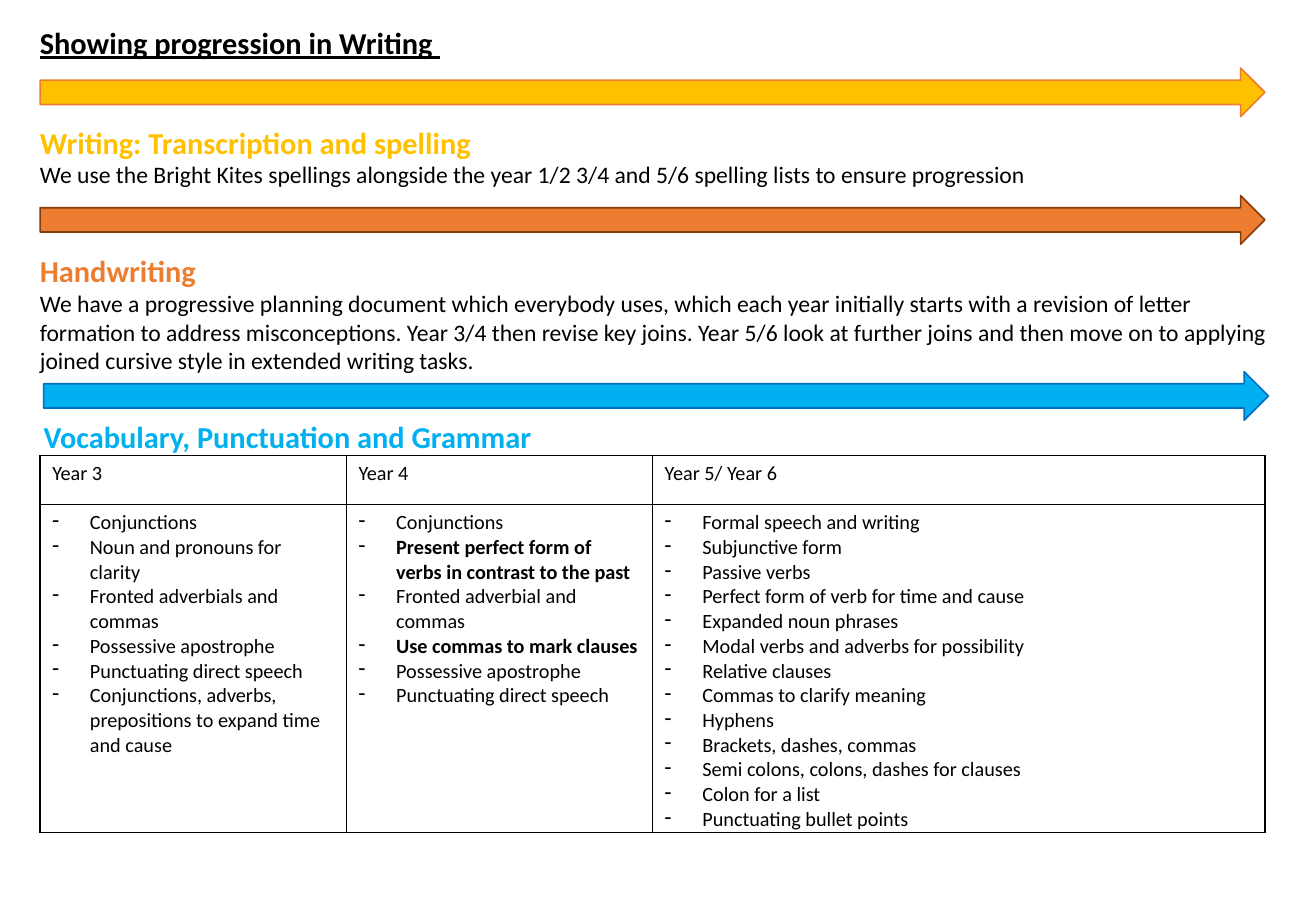
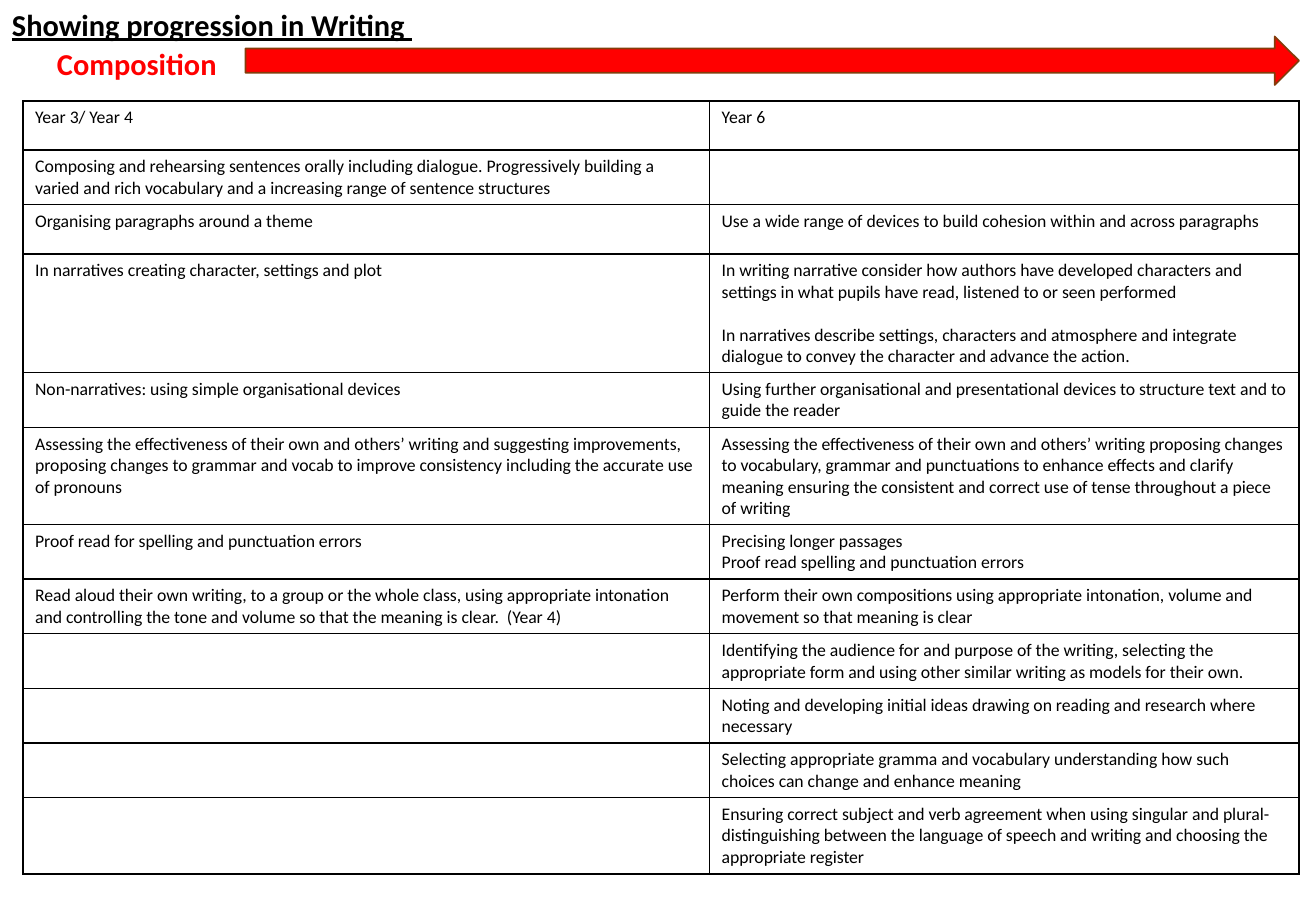
from lxml import etree
from pptx import Presentation
from pptx.dml.color import RGBColor
from pptx.enum.shapes import MSO_SHAPE
from pptx.oxml.ns import qn
from pptx.util import Inches, Pt

ARROW = MSO_SHAPE.RIGHT_ARROW
BLACK = RGBColor(0x00, 0x00, 0x00)
GOLD = RGBColor(0xFF, 0xC0, 0x00)
ORANGE = RGBColor(0xED, 0x7D, 0x31)
BROWN = RGBColor(0x84, 0x3C, 0x0B)
SKY = RGBColor(0x00, 0xB0, 0xF0)
BLUE = RGBColor(0x00, 0x70, 0xC0)
RED = RGBColor(0xFF, 0x00, 0x00)
FONT = "Calibri"

prs = Presentation()
prs.slide_width = Inches(10.83)
prs.slide_height = Inches(7.5)
COL = prs.slide_width / 100
ROW = prs.slide_height / 100
BAND = 5.33
TEXT_W = 95.29


def box(x, y, w, h):
    return round(x * COL), round(y * ROW), round(w * COL), round(h * ROW)


def write(tf, lines):
    tf.word_wrap = True
    for i, (text, size, color, bold) in enumerate(lines):
        p = tf.paragraphs[0] if i == 0 else tf.add_paragraph()
        p.text = text
        p.font.name = FONT
        p.font.size = Pt(size)
        p.font.bold = bold
        p.font.color.rgb = color


skills, composition = [prs.slides.add_slide(prs.slide_layouts[6]) for _ in range(2)]

for s, x, y in [(skills, 2.12, 2), (composition, 0, 0)]:
    tf = s.shapes.add_textbox(*box(x, y, 93.07, BAND)).text_frame
    write(tf, [("Showing progression in Writing ", 18, BLACK, True)])
    tf.paragraphs[0].font.underline = True

SPELLING = ("We use the Bright Kites spellings alongside the year 1/2 3/4 and 5/6 "
            "spelling lists to ensure progression")
JOINS = ("We have a progressive planning document which everybody uses, which each year "
         "initially starts with a revision of letter formation to address misconceptions. "
         "Year 3/4 then revise key joins. Year 5/6 look at further joins and then move on "
         "to applying joined cursive style in extended writing tasks.")

sections = [
    (skills, GOLD, ORANGE, (3.05, 7.47, 93.07), (2.12, 12.93, 8.53),
     "Writing: Transcription and spelling", SPELLING),
    (skills, ORANGE, BROWN, (3.05, 21.47, 93.07), (2.12, 27.07, 14.8),
     "Handwriting", JOINS),
    (skills, SKY, BLUE, (3.32, 40.8, 93.07), (2.4, 45.2, BAND),
     "Vocabulary, Punctuation and Grammar", None),
    (composition, RED, BROWN, (18.65, 4, 80.06), (3.42, 4.27, BAND),
     "Composition", None),
]
for s, color, edge, arrow, (x, y, h), heading, body in sections:
    sp = s.shapes.add_shape(ARROW, *box(*arrow, BAND))
    sp.shadow.inherit = False
    sp.fill.solid()
    sp.fill.fore_color.rgb = color
    sp.line.color.rgb = edge
    sp.line.width = Pt(1)
    lines = [(heading, 18, color, True)]
    if body:
        lines.append((body, 14, BLACK, False))
    write(s.shapes.add_textbox(*box(x, y, TEXT_W, h)).text_frame, lines)

BOLD = {"Present perfect form of verbs in contrast to the past", "Use commas to mark clauses"}
grammar_rows = [
    (["Year 3"], ["Year 4"], ["Year 5/ Year 6"]),
    (["Conjunctions",
      "Noun and pronouns for clarity",
      "Fronted adverbials and commas",
      "Possessive apostrophe",
      "Punctuating direct speech",
      "Conjunctions, adverbs, prepositions to expand time and cause"],
     ["Conjunctions",
      "Present perfect form of verbs in contrast to the past",
      "Fronted adverbial and commas",
      "Use commas to mark clauses",
      "Possessive apostrophe",
      "Punctuating direct speech"],
     ["Formal speech and writing",
      "Subjunctive form",
      "Passive verbs",
      "Perfect form of verb for time and cause",
      "Expanded noun phrases",
      "Modal verbs and adverbs for possibility",
      "Relative clauses",
      "Commas to clarify meaning",
      "Hyphens",
      "Brackets, dashes, commas",
      "Semi colons, colons, dashes for clauses",
      "Colon for a list",
      "Punctuating bullet points"]),
]
composition_rows = [
    (["Year 3/ Year 4"], ["Year 6"]),
    (["Composing and rehearsing sentences orally including dialogue. Progressively building "
      "a varied and rich vocabulary and a increasing range of sentence structures"], []),
    (["Organising paragraphs around a theme"],
     ["Use a wide range of devices to build cohesion within and across paragraphs"]),
    (["In narratives creating character, settings and plot"],
     ["In writing narrative consider how authors have developed characters and settings in "
      "what pupils have read, listened to or seen performed",
      "In narratives describe settings, characters and atmosphere and integrate dialogue to "
      "convey the character and advance the action."]),
    (["Non-narratives: using simple organisational devices"],
     ["Using further organisational and presentational devices to structure text and to "
      "guide the reader"]),
    (["Assessing the effectiveness of their own and others’ writing and suggesting "
      "improvements, proposing changes to grammar and vocab to improve consistency including "
      "the accurate use of pronouns"],
     ["Assessing the effectiveness of their own and others’ writing proposing changes to "
      "vocabulary, grammar and punctuations to enhance effects and clarify meaning ensuring "
      "the consistent and correct use of tense throughout a piece of writing"]),
    (["Proof read for spelling and punctuation errors"],
     ["Precising longer passages", "Proof read spelling and punctuation errors"]),
    (["Read aloud their own writing, to a group or the whole class, using appropriate "
      "intonation and controlling the tone and volume so that the meaning is clear.  (Year 4)"],
     ["Perform their own compositions using appropriate intonation, volume and movement so "
      "that meaning is clear"]),
    ([], ["Identifying the audience for and purpose of the writing, selecting the appropriate "
          "form and using other similar writing as models for their own."]),
    ([], ["Noting and developing initial ideas drawing on reading and research where "
          "necessary"]),
    ([], ["Selecting appropriate gramma and vocabulary understanding how such choices can "
          "change and enhance meaning"]),
    ([], ["Ensuring correct subject and verb agreement when using singular and plural- "
          "distinguishing between the language of speech and writing and choosing the "
          "appropriate register"]),
]

ONE, TWO = 5.4, 6
tables = [
    (skills, 3.05, 50, [23.27, 23.27, 46.53], [5.4, 36], 12, 0.01, grammar_rows),
    (composition, 1.75, 11.07, [52.17, 44.78],
     [ONE, TWO, ONE, 13, TWO, 10.6] + [TWO] * 5 + [8.4], 10.5, 0.05, composition_rows),
]
grids = []
for s, x, y, widths, heights, size, bottom, rows in tables:
    table = s.shapes.add_table(len(rows), len(widths),
                               *box(x, y, sum(widths), sum(heights))).table
    table.first_row = table.horz_banding = False
    grids.append(table)
    for column, w in zip(table.columns, widths):
        column.width = round(w * COL)
    for r, (row, h) in enumerate(zip(rows, heights)):
        table.rows[r].height = round(h * ROW)
        for c, texts in enumerate(row):
            cell = table.cell(r, c)
            cell.margin_bottom = Inches(bottom)
            tcPr = cell._tc.get_or_add_tcPr()
            for side in ("a:lnL", "a:lnR", "a:lnT", "a:lnB"):
                ln = etree.SubElement(tcPr, qn(side), w=str(Pt(1)))
                fill = etree.SubElement(ln, qn("a:solidFill"))
                etree.SubElement(fill, qn("a:srgbClr"), val=str(BLACK))
            cell.fill.background()
            write(cell.text_frame, [(t, size, BLACK, t in BOLD) for t in texts])

for cell in grids[0].rows[1].cells:
    for p in cell.text_frame.paragraphs:
        pPr = p._p.get_or_add_pPr()
        pPr.set("marL", str(Inches(0.31)))
        pPr.set("indent", str(Inches(-0.31)))
        bullet = etree.Element(qn("a:buChar"), char="-")
        pPr.insert(0, bullet)

grids[1].cell(3, 1).text_frame.paragraphs[1].space_before = Pt(12.8)

prs.save("out.pptx")
